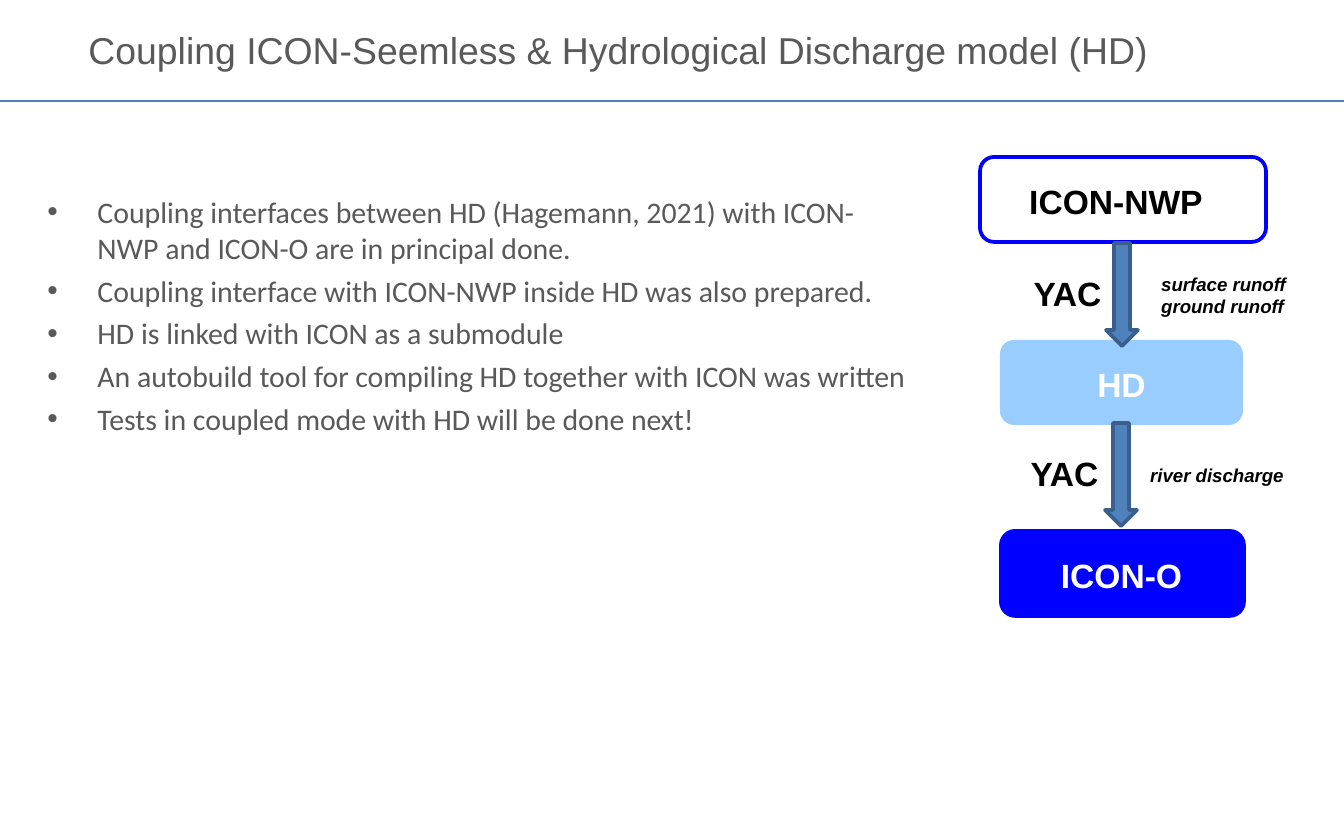
from lxml import etree
from pptx import Presentation
from pptx.dml.color import RGBColor
from pptx.enum.shapes import MSO_CONNECTOR, MSO_SHAPE
from pptx.enum.text import MSO_ANCHOR, MSO_AUTO_SIZE, PP_ALIGN
from pptx.oxml.ns import qn
from pptx.util import Emu, Pt

ROUNDED, DOWN_ARROW = MSO_SHAPE.ROUNDED_RECTANGLE, MSO_SHAPE.DOWN_ARROW
STRAIGHT = MSO_CONNECTOR.STRAIGHT
LEFT, CENTER = PP_ALIGN.LEFT, PP_ALIGN.CENTER
TOP, MIDDLE = MSO_ANCHOR.TOP, MSO_ANCHOR.MIDDLE
NO_AUTOFIT = MSO_AUTO_SIZE.NONE

SLIDE_W, SLIDE_H = 1344, 840
EMU_PER_PX = 9144000 / SLIDE_W
COLORS = {
    "text": "595959", "steel": "4F81BD", "steel_dark": "3A5F8C",
    "blue": "0000FF", "sky": "99CCFF", "white": "FFFFFF", "black": "000000",
}
STATUS = [
    "Coupling interfaces between HD (Hagemann, 2021) with ICON-NWP and ICON-O "
    "are in principal done.",
    "Coupling interface with ICON-NWP inside HD was also prepared.",
    "HD is linked with ICON as a submodule",
    "An autobuild tool for compiling HD together with ICON was written",
    "Tests in coupled mode with HD will be done next!",
]
# name, box within the flow, fill, outline, text colour, label shift
MODELS = [
    ("ICON-NWP", (0, 0, 286, 85), "white", "blue", "black", -7),
    ("HD", (20, 183, 243, 85), "sky", None, "white", 0),
    ("ICON-O", (21, 374, 243, 85), "blue", "blue", "white", -1),
]
# arrow corner, exchanged fields, left of the fields and of the coupler name
COUPLINGS = [
    ((126, 86), ["surface runoff", "ground runoff"], 168, 25),
    ((125, 266), ["river discharge"], 157, 22),
]


def px(length):
    return Emu(round(length * EMU_PER_PX))


def rgb(name):
    return RGBColor.from_string(COLORS[name])


def place(shape, box):
    shape.left, shape.top, shape.width, shape.height = map(px, box)


def add_run(paragraph, text, size, color, font="Arial", bold=False, italic=False):
    run = paragraph.add_run()
    run.text = text
    run.font.name, run.font.size = font, Pt(size)
    run.font.bold, run.font.italic = bold, italic
    run.font.color.rgb = rgb(color)


def add_label(slide, box, lines, size, color, align=CENTER, italic=False):
    frame = slide.shapes.add_textbox(*map(px, box)).text_frame
    frame.word_wrap = True
    for i, line in enumerate(lines):
        paragraph = frame.add_paragraph() if i else frame.paragraphs[0]
        paragraph.alignment = align
        add_run(paragraph, line, size, color, bold=True, italic=italic)


def add_block(slide, preset, box, fill, outline):
    block = slide.shapes.add_shape(preset, *map(px, box))
    block.shadow.inherit = False
    block.fill.solid()
    block.fill.fore_color.rgb = rgb(fill)
    if outline:
        block.line.color.rgb = rgb(outline)
        block.line.width = Pt(2)
    else:
        block.line.fill.background()


def add_header(slide, box):
    left, top, width, height = box
    # Rule below the title
    rule = slide.shapes.add_connector(
        STRAIGHT, px(left), px(top + height), px(left + width), px(top + height))
    rule.line.color.rgb = rgb("steel")
    rule.line.width = Pt(1.5)
    etree.SubElement(rule._element.spPr, qn("a:effectLst"))
    # Title
    title = slide.shapes.title
    place(title, (left + 75, top + 15, 1118, 69))
    frame = title.text_frame
    frame.auto_size, frame.vertical_anchor = NO_AUTOFIT, MIDDLE
    frame.paragraphs[0].alignment = LEFT
    add_run(frame.paragraphs[0],
            "Coupling ICON-Seemless & Hydrological Discharge model (HD)", 20, "text")


def add_status_list(slide, box):
    body = slide.placeholders[1]
    place(body, box)
    frame = body.text_frame
    frame.auto_size, frame.vertical_anchor = NO_AUTOFIT, TOP
    for i, item in enumerate(STATUS):
        paragraph = frame.add_paragraph() if i else frame.paragraphs[0]
        properties = paragraph._p.get_or_add_pPr()
        properties.set("marL", str(px(50)))
        properties.set("indent", str(px(-50)))
        paragraph.space_before = Pt(3.75 if i else 0)
        etree.SubElement(properties, qn("a:buFont")).set("typeface", "Arial")
        etree.SubElement(properties, qn("a:buChar")).set("char", "•")
        add_run(paragraph, item, 16, "text", font="Calibri")


def add_model_flow(slide, left, top):
    # Models
    for name, (x, y, width, height), fill, outline, color, shift in MODELS:
        add_block(slide, ROUNDED, (left + x, top + y, width, height), fill, outline)
        label_box = (left + x + 31 + shift, top + y + 17, width - 62, 54)
        add_label(slide, label_box, [name], 18, color)
    # Couplings between them
    for (x, y), fields, fields_x, coupler_x in COUPLINGS:
        add_block(slide, DOWN_ARROW, (left + x, top + y, 32, 103),
                  "steel", "steel_dark")
        fields_h = 13 + 23 * len(fields)
        fields_y = top + y + 52 - fields_h // 2
        add_label(slide, (left + fields_x, fields_y, 180, fields_h),
                  fields, 10, "black", LEFT, italic=True)
        add_label(slide, (left + coupler_x, top + y + 23, 125, 54),
                  ["YAC"], 18, "black")


def main():
    deck = Presentation()
    deck.slide_width, deck.slide_height = px(SLIDE_W), px(SLIDE_H)
    slide = deck.slides.add_slide(deck.slide_layouts[1])
    add_header(slide, (0, 0, SLIDE_W, 101))
    add_status_list(slide, (34, 187, 894, 259))
    add_model_flow(slide, 980, 157)
    deck.save("out.pptx")


if __name__ == "__main__":
    main()
